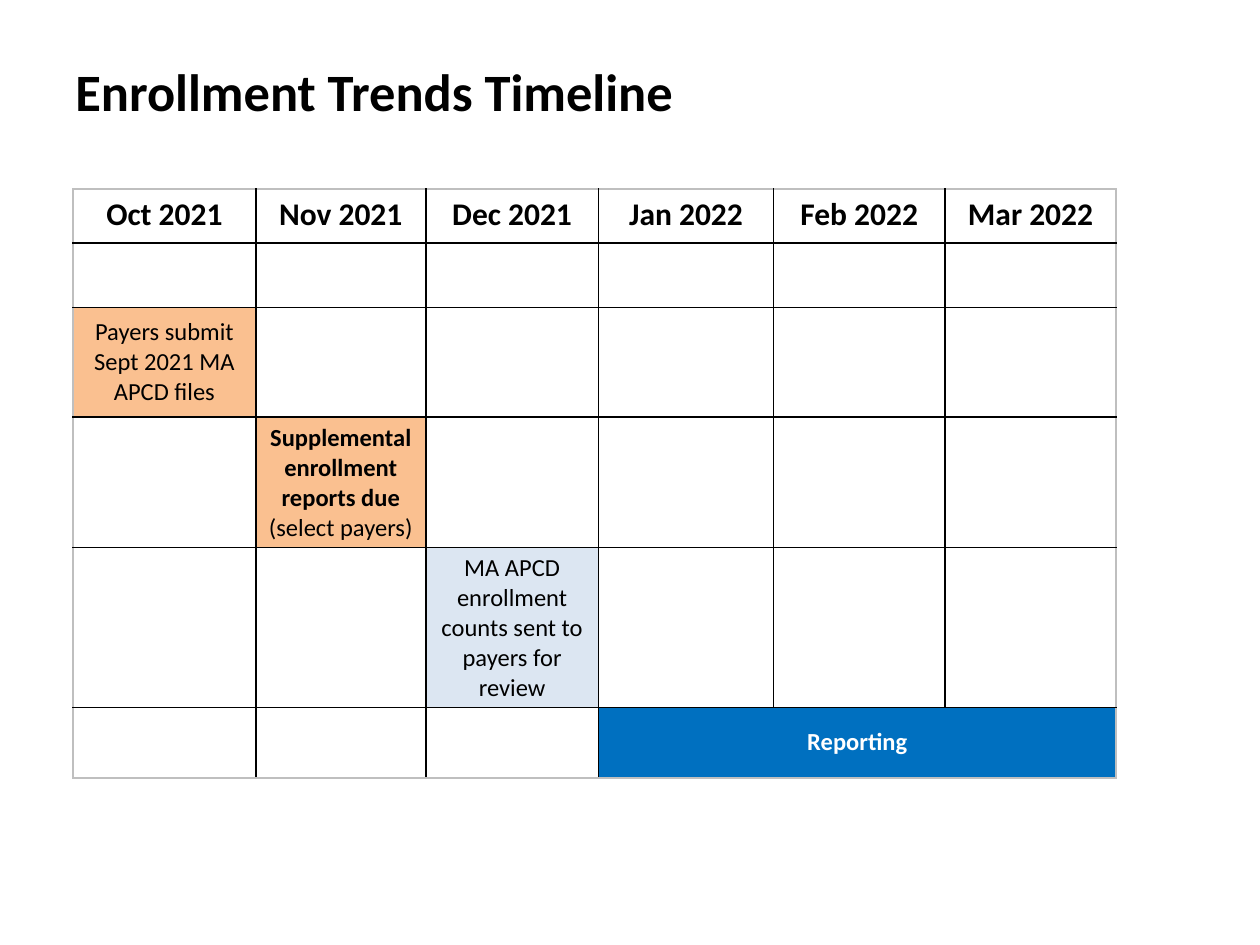
from lxml.etree import SubElement
from pptx import Presentation
from pptx.dml.color import RGBColor
from pptx.enum.text import MSO_ANCHOR, PP_ALIGN
from pptx.oxml import parse_xml
from pptx.oxml.ns import nsdecls, qn
from pptx.util import Inches, Pt

FONT = "Calibri"
BLACK = RGBColor(0x00, 0x00, 0x00)
WHITE = RGBColor(0xFF, 0xFF, 0xFF)
GRAY = RGBColor(0xBF, 0xBF, 0xBF)
ORANGE = RGBColor(0xFA, 0xC0, 0x90)
PALE_BLUE = RGBColor(0xDC, 0xE6, 0xF2)
BLUE = RGBColor(0x00, 0x70, 0xC0)

COL_WIDTHS = [1.45, 1.35, 1.37, 1.39, 1.36, 1.36]
ROW_HEIGHTS = [0.43, 0.51, 0.87, 1.03, 1.27, 0.56]
MONTHS = ["Oct 2021", "Nov 2021", "Dec 2021", "Jan 2022", "Feb 2022", "Mar 2022"]

# (row, column, columns spanned, fill, text colour, [(text, bold), ...])
STEPS = [
    (2, 0, 1, ORANGE, BLACK, [("Payers submit Sept 2021 MA APCD files", False)]),
    (3, 1, 1, ORANGE, BLACK, [("Supplemental enrollment reports due ", True),
                              ("(select payers)", False)]),
    (4, 2, 1, PALE_BLUE, BLACK,
     [("MA APCD enrollment counts sent to payers for review", False)]),
    (5, 3, 3, BLUE, WHITE, [("Reporting", True)]),
]


def add_run(p, text, size, color=BLACK, bold=False):
    r = p.add_run()
    r.text = text
    r.font.name = FONT
    r.font.size = Pt(size)
    r.font.bold = bold
    r.font.color.rgb = color


def add_title(slide, text):
    box = slide.shapes.add_textbox(Inches(0.5), Inches(0.42), Inches(8.5), Inches(0.61))
    tf = box.text_frame
    tf.word_wrap = True
    add_run(tf.paragraphs[0], text, 30, bold=True)


def fill_cell(cell, color):
    cell.fill.solid()
    cell.fill.fore_color.rgb = color


def write_cell(cell, runs, size, color=BLACK):
    p = cell.text_frame.paragraphs[0]
    p.alignment = PP_ALIGN.CENTER
    for text, bold in runs:
        add_run(p, text, size, color, bold)


def set_borders(cell, colors):
    """Border lines go ahead of the fill, in the order L, R, T, B."""
    tc_pr = cell._tc.get_or_add_tcPr()
    for i, (side, color) in enumerate(colors.items()):
        ln = parse_xml(f'<a:ln{side} {nsdecls("a")} w="12700"/>')
        fill = SubElement(ln, qn("a:solidFill"))
        SubElement(fill, qn("a:srgbClr"), val=str(color))
        tc_pr.insert(i, ln)


def draw_grid(table):
    last_row, last_col = len(ROW_HEIGHTS) - 1, len(COL_WIDTHS) - 1
    for row in range(last_row + 1):
        for col in range(last_col + 1):
            cell = table.cell(row, col)
            if cell.is_spanned:
                continue
            right = col + cell.span_width - 1 if cell.is_merge_origin else col
            outer = {"L": col == 0, "R": right == last_col,
                     "T": row == 0, "B": row == last_row}
            set_borders(cell, {side: GRAY if edge else BLACK
                               for side, edge in outer.items()})


def add_timeline(slide):
    shape = slide.shapes.add_table(
        len(ROW_HEIGHTS), len(COL_WIDTHS), Inches(0.58), Inches(1.5),
        Inches(sum(COL_WIDTHS)), Inches(sum(ROW_HEIGHTS)))
    table = shape.table
    table.first_row = table.horz_banding = False
    for column, width in zip(table.columns, COL_WIDTHS):
        column.width = Inches(width)
    for row, height in zip(table.rows, ROW_HEIGHTS):
        row.height = Inches(height)
    for cell in table.iter_cells():
        fill_cell(cell, WHITE)

    # Month headings
    for col, month in enumerate(MONTHS):
        write_cell(table.cell(0, col), [(month, True)], 18)

    # Timeline steps
    for row, col, span, fill, color, runs in STEPS:
        cell = table.cell(row, col)
        if span > 1:
            cell.merge(table.cell(row, col + span - 1))
        fill_cell(cell, fill)
        cell.vertical_anchor = MSO_ANCHOR.MIDDLE
        write_cell(cell, runs, 14, color)

    draw_grid(table)


def main():
    prs = Presentation()
    prs.slide_width, prs.slide_height = Inches(10), Inches(7.5)
    s = prs.slides.add_slide(prs.slide_layouts[6])
    add_title(s, "Enrollment Trends Timeline")
    add_timeline(s)
    prs.save("out.pptx")


if __name__ == "__main__":
    main()
